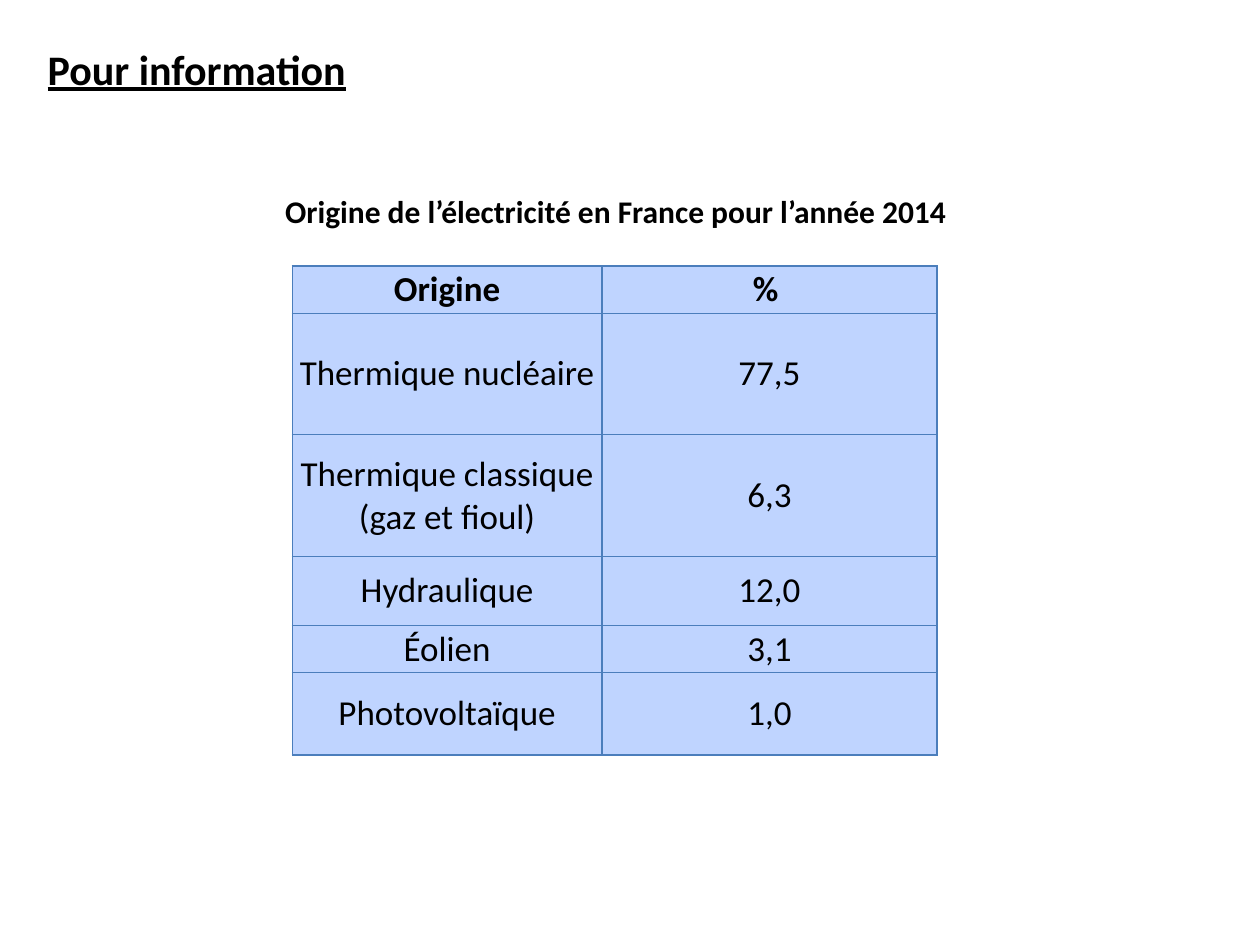
from lxml.etree import SubElement
from pptx import Presentation
from pptx.dml.color import RGBColor
from pptx.enum.text import MSO_ANCHOR, PP_ALIGN
from pptx.oxml.ns import qn
from pptx.util import Pt

BLACK = RGBColor(0, 0, 0)
LIGHT_BLUE = RGBColor(0xBF, 0xD4, 0xFF)
BORDER_BLUE = RGBColor(0x4B, 0x7E, 0xBC)


def format_text(text_frame, size, alignment, bold):
    for paragraph in text_frame.paragraphs:
        paragraph.alignment = alignment
        for span in paragraph.runs:
            span.font.name = "Calibri"
            span.font.size = Pt(size)
            span.font.bold = bold
            span.font.color.rgb = BLACK


def add_borders(cell):
    properties = cell._tc.get_or_add_tcPr()
    for position, side in enumerate(("lnL", "lnR", "lnT", "lnB")):
        line = properties.makeelement(qn(f"a:{side}"), {"w": str(Pt(0.75))})
        fill = SubElement(line, qn("a:solidFill"))
        SubElement(fill, qn("a:srgbClr"), val=str(BORDER_BLUE))
        properties.insert(position, line)


deck = Presentation()
deck.slide_width, deck.slide_height = Pt(720), Pt(540)
page = deck.slides.add_slide(deck.slide_layouts[5])

title = page.shapes.title
title.left, title.top, title.width, title.height = Pt(20), Pt(21), Pt(221), Pt(36)
title.text_frame.text = "Pour information"
title.text_frame.vertical_anchor = MSO_ANCHOR.TOP
format_text(title.text_frame, 24, PP_ALIGN.LEFT, True)
title.text_frame.paragraphs[0].runs[0].font.underline = True

rows = [
    ("Origine", "% ", 27),
    ("Thermique nucléaire", "77,5", 69.5),
    ("Thermique classique\n(gaz et fioul)", "6,3", 69.5),
    ("Hydraulique", "12,0", 39.5),
    ("Éolien", "3,1", 27),
    ("Photovoltaïque", "1,0", 47),
]
table_height = sum(height for *_, height in rows)
table = page.shapes.add_table(
    len(rows), 2, Pt(167), Pt(152), Pt(368.5), Pt(table_height)
).table
table.columns[0].width = Pt(177)
table.columns[1].width = Pt(191.5)
for row_index, (source, share, height) in enumerate(rows):
    table.rows[row_index].height = Pt(height)
    for column_index, text in enumerate((source, share)):
        cell = table.cell(row_index, column_index)
        cell.text_frame.text = text
        cell.vertical_anchor = MSO_ANCHOR.MIDDLE
        cell.margin_left = cell.margin_right = Pt(2.2)
        cell.margin_top = cell.margin_bottom = Pt(1.2)
        cell.fill.solid()
        cell.fill.fore_color.rgb = LIGHT_BLUE
        add_borders(cell)
        format_text(cell.text_frame, 20, PP_ALIGN.CENTER, row_index == 0)

caption = page.shapes.add_textbox(Pt(145), Pt(106), Pt(414), Pt(29))
caption.text_frame.word_wrap = True
caption.text_frame.text = "Origine de l’électricité en France pour l’année 2014"
format_text(caption.text_frame, 18, PP_ALIGN.CENTER, True)

deck.save("out.pptx")
